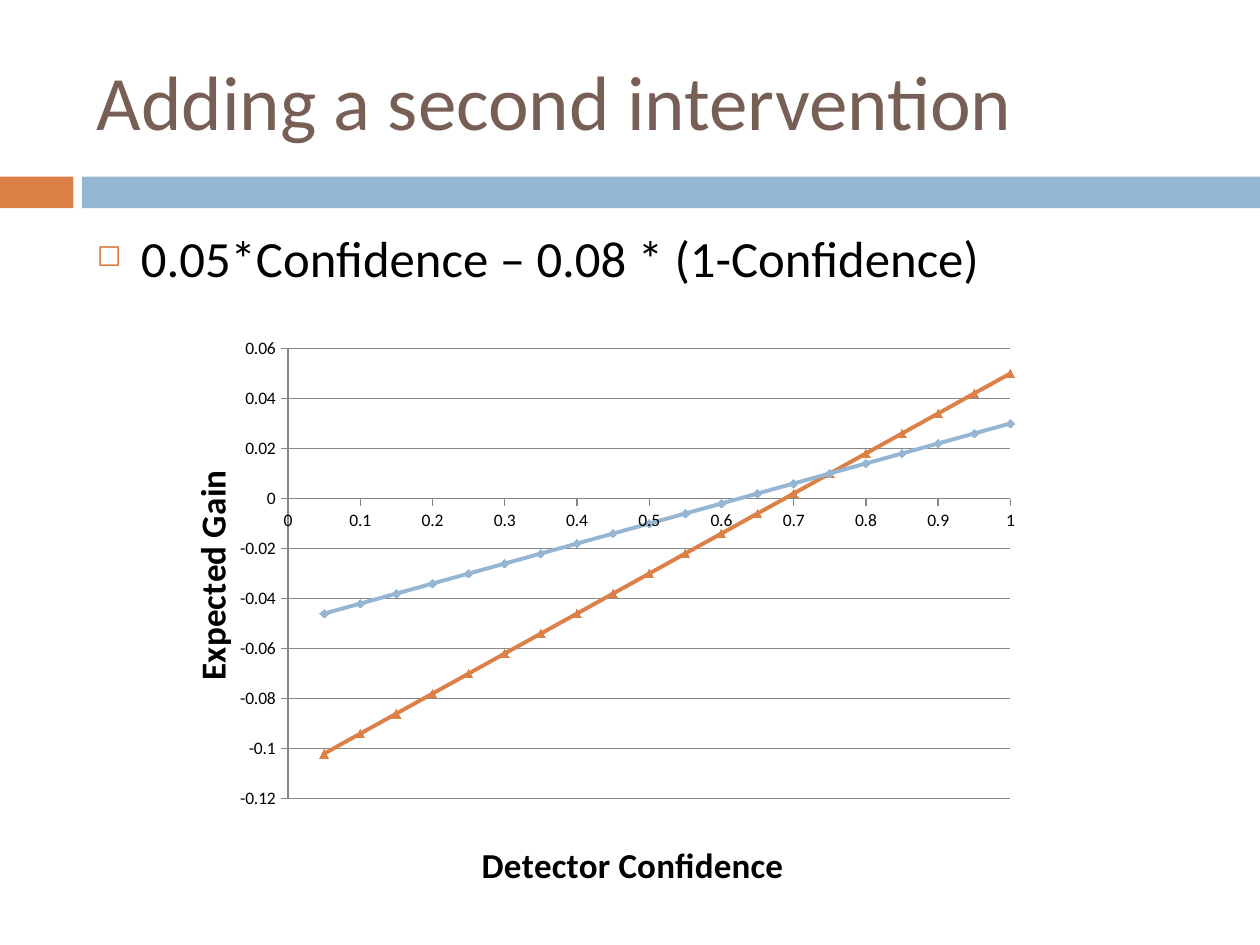
from lxml import etree
from pptx import Presentation
from pptx.chart.data import XyChartData
from pptx.dml.color import RGBColor
from pptx.enum.chart import XL_CHART_TYPE, XL_MARKER_STYLE, XL_TICK_MARK
from pptx.enum.shapes import MSO_SHAPE
from pptx.enum.text import MSO_ANCHOR
from pptx.oxml.ns import qn
from pptx.util import Cm, Pt

ORANGE = RGBColor(0xDD, 0x80, 0x47)
BLUE = RGBColor(0x94, 0xB6, 0xD2)
BROWN = RGBColor(0x77, 0x5F, 0x55)
BLACK = RGBColor(0, 0, 0)
GRAY = RGBColor(0x87, 0x87, 0x87)
FONT = "Calibri"
RECTANGLE = MSO_SHAPE.RECTANGLE
MIDDLE = MSO_ANCHOR.MIDDLE
SCATTER = XL_CHART_TYPE.XY_SCATTER_SMOOTH
OUTSIDE, NO_TICK = XL_TICK_MARK.OUTSIDE, XL_TICK_MARK.NONE
DIAMOND, TRIANGLE = XL_MARKER_STYLE.DIAMOND, XL_MARKER_STYLE.TRIANGLE

INTERVENTIONS = [
    ("Series 1", 0.03, 0.05, BLUE, DIAMOND),
    ("Series 2", 0.05, 0.11, ORANGE, TRIANGLE),
]


def style_font(font, size, color, bold=False):
    """Set the typeface, size, colour and weight of a font."""
    font.name, font.size, font.bold = FONT, Pt(size), bold
    font.color.rgb = color


def add_text(page, left, top, width, height, text, size, color):
    """Add a wrapped one-paragraph text box and return it."""
    box = page.shapes.add_textbox(left, top, width, height)
    box.text_frame.word_wrap = True
    para = box.text_frame.paragraphs[0]
    para.text = text
    style_font(para.runs[0].font, size, color)
    return box


def add_band(page, left, top, width, height):
    """Draw the two-colour band, split by a narrow gap."""
    split, gap = Cm(1.48), Cm(0.17)
    rest = split + gap
    for x, part, color in ((left, split, ORANGE), (left + rest, width - rest, BLUE)):
        bar = page.shapes.add_shape(RECTANGLE, x, top, part, height)
        bar.shadow.inherit = False
        bar.fill.solid()
        bar.fill.fore_color.rgb = color
        bar.line.fill.background()


def add_title(page, left, top, width, height):
    """Place the slide title, centred vertically."""
    box = add_text(page, left, top, width, height, "Adding a second intervention", 44, BROWN)
    box.text_frame.vertical_anchor = MIDDLE


def add_formula(page, left, top, width, height):
    """Place the gain formula as a bulleted line."""
    box = add_text(page, left, top, width, height,
                   "0.05*Confidence – 0.08 * (1-Confidence)", 29, BLACK)
    properties = box.text_frame.paragraphs[0]._p.get_or_add_pPr()
    properties.set("marL", str(Cm(0.89)))
    properties.set("indent", str(-Cm(0.89)))
    color = etree.SubElement(properties, qn("a:buClr"))
    etree.SubElement(color, qn("a:srgbClr"), val=str(ORANGE))
    etree.SubElement(properties, qn("a:buSzPct"), val="60000")
    etree.SubElement(properties, qn("a:buChar"), char="◻")


def set_layout(parent, index, **fractions):
    """Fix a chart part at fractions of the chart area."""
    for old in parent.findall(qn("c:layout")):
        parent.remove(old)
    layout = etree.Element(qn("c:layout"))
    manual = etree.SubElement(layout, qn("c:manualLayout"))
    if "w" in fractions:
        etree.SubElement(manual, qn("c:layoutTarget"), val="inner")
    for side in ("x", "y"):
        etree.SubElement(manual, qn(f"c:{side}Mode"), val="edge")
    for side, fraction in fractions.items():
        etree.SubElement(manual, qn(f"c:{side}"), val=str(fraction))
    parent.insert(index, layout)


def style_axis(axis, title, low, high, step, x, y):
    """Set the title, scale, ticks and line of an axis."""
    axis.minimum_scale, axis.maximum_scale, axis.major_unit = low, high, step
    axis.major_tick_mark, axis.minor_tick_mark = OUTSIDE, NO_TICK
    axis.tick_labels.number_format = "General"
    axis.tick_labels.number_format_is_linked = False
    axis.format.line.color.rgb = GRAY
    axis.format.line.width = Pt(0.75)
    frame = axis.axis_title.text_frame
    frame.text = title
    style_font(frame.paragraphs[0].runs[0].font, 20, BLACK, True)
    set_layout(axis.axis_title._element, 1, x=x, y=y)


def add_gain_chart(page, left, top, width, height):
    """Plot expected gain against confidence for both interventions."""
    data = XyChartData()
    for name, gain, loss, _, _ in INTERVENTIONS:
        points = data.add_series(name)
        for step in range(1, 21):
            confidence = step / 20
            points.add_data_point(
                confidence, round(gain * confidence - loss * (1 - confidence), 3))
    chart = page.shapes.add_chart(SCATTER, left, top, width, height, data).chart
    chart.has_legend = chart.has_title = False
    style_font(chart.font, 10, BLACK)
    set_layout(chart._chartSpace.chart.plotArea, 0, x=0.17, y=0.04, w=0.81, h=0.78)

    confidence_axis, gain_axis = chart.category_axis, chart.value_axis
    style_axis(confidence_axis, "Detector Confidence", 0, 1, 0.1, 0.38, 0.88)
    style_axis(gain_axis, "Expected Gain", -0.12, 0.06, 0.02, 0.05, 0.24)
    confidence_axis.has_major_gridlines = False
    gain_axis.has_major_gridlines = True
    gain_axis.major_gridlines.format.line.color.rgb = GRAY
    gain_axis.major_gridlines.format.line.width = Pt(0.75)
    body = gain_axis.axis_title._element.find(".//" + qn("a:bodyPr"))
    body.set("rot", "-5400000")
    body.set("vert", "horz")

    for series, (_, _, _, color, marker) in zip(chart.plots[0].series, INTERVENTIONS):
        series.smooth = True
        series.format.line.color.rgb = color
        series.format.line.width = Pt(2.25)
        series.marker.style, series.marker.size = marker, 5
        series.marker.format.fill.solid()
        series.marker.format.fill.fore_color.rgb = color
        series.marker.format.line.color.rgb = color


def main():
    """Build and save the one-slide deck."""
    deck = Presentation()
    deck.slide_width, deck.slide_height = Cm(25.4), Cm(19.05)
    page = deck.slides.add_slide(deck.slide_layouts[6])
    add_band(page, 0, Cm(3.56), deck.slide_width, Cm(0.64))
    add_title(page, Cm(1.7), Cm(0.64), Cm(22.65), Cm(2.75))
    add_formula(page, Cm(1.7), Cm(4.45), Cm(22.65), Cm(12.5))
    add_gain_chart(page, Cm(2.75), Cm(6.56), Cm(17.98), Cm(11.64))
    deck.save("out.pptx")


if __name__ == "__main__":
    main()
